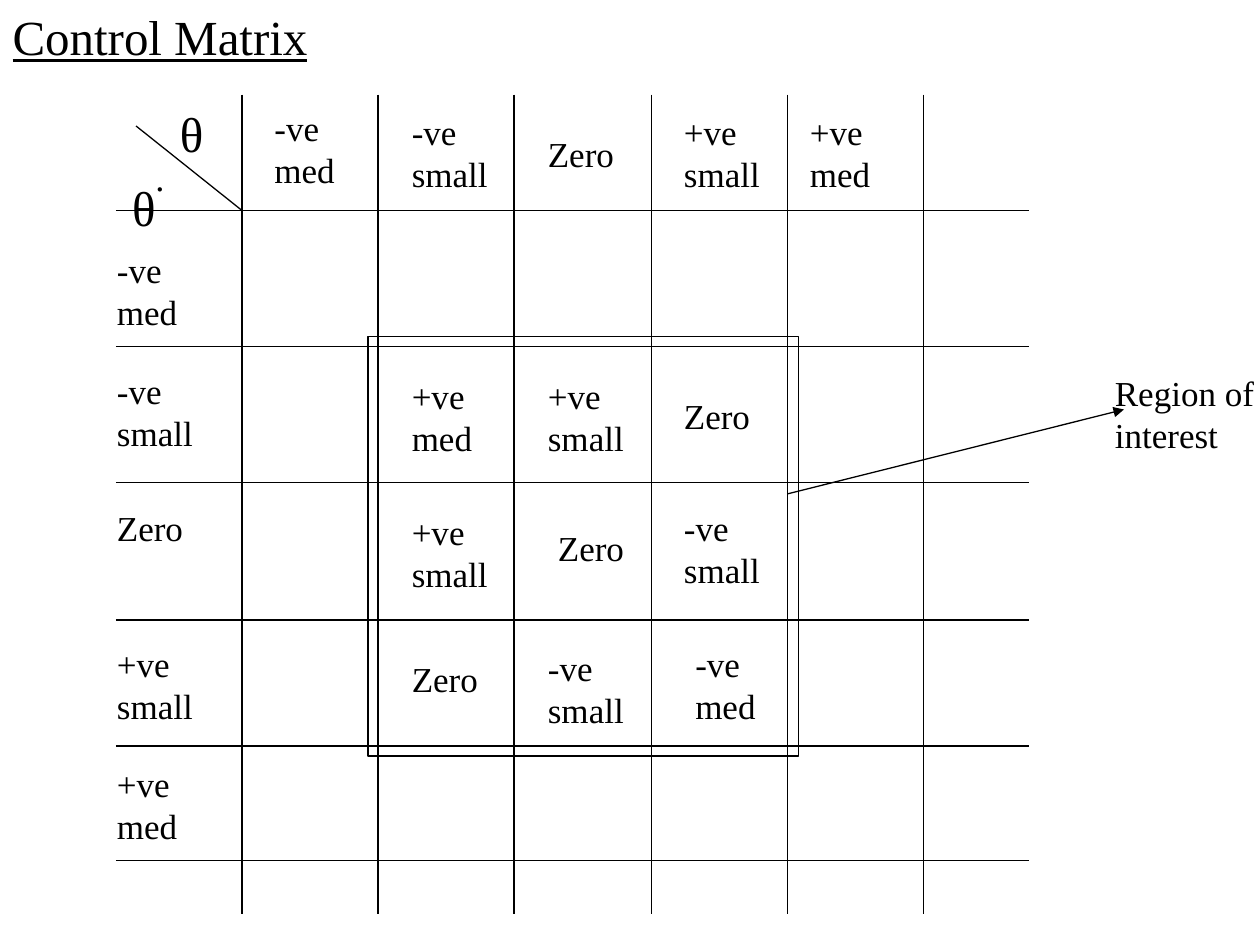
from lxml import etree
from pptx import Presentation
from pptx.dml.color import RGBColor
from pptx.enum.shapes import MSO_CONNECTOR, MSO_SHAPE
from pptx.enum.text import MSO_ANCHOR, MSO_AUTO_SIZE, PP_ALIGN
from pptx.oxml.ns import qn
from pptx.util import Inches, Pt

STRAIGHT = MSO_CONNECTOR.STRAIGHT
RECT = MSO_SHAPE.RECTANGLE
TOP = MSO_ANCHOR.TOP
GROW = MSO_AUTO_SIZE.SHAPE_TO_FIT_TEXT
LEFT = PP_ALIGN.LEFT

BLACK = RGBColor(0, 0, 0)
FONT = "Times New Roman"

# Grid lines: even columns, rows of varied height
COLS = [round((23 + 13 * i) / 12, 2) for i in range(6)]
ROWS = [1.67, 2.75, 3.83, 4.92, 5.92, 6.83]

# Labels and cells as (text, left, top)
SIDE = [("-ve med", 0.83, 1.92), ("-ve small", 0.83, 2.88),
        ("Zero", 0.83, 3.97), ("+ve small", 0.83, 5.05),
        ("+ve med", 0.83, 6)]
HEAD = [("-ve med", 2.08, 0.8), ("-ve small", 3.17, 0.83),
        ("Zero", 4.25, 1), ("+ve small", 5.33, 0.83),
        ("+ve med", 6.33, 0.83)]
CELLS = [("+ve med", 3.17, 2.92), ("+ve small", 4.25, 2.92),
         ("Zero", 5.33, 3.08),
         ("+ve small", 3.17, 4), ("Zero", 4.33, 4.13),
         ("-ve small", 5.33, 3.97),
         ("Zero", 3.17, 5.17), ("-ve small", 4.25, 5.08),
         ("-ve med", 5.42, 5.05)]


def add_run(para, text, size=20, line=False, base=None):
    run = para.add_run()
    run.text = text
    font = run.font
    font.name, font.size, font.underline = FONT, Pt(size), line
    font.color.rgb = BLACK
    if base:
        font._element.set("baseline", str(base * 1000))


def write(shape, text, wrap=True, **style):
    frame = shape.text_frame
    frame.word_wrap = wrap
    frame.auto_size = GROW
    frame.vertical_anchor = TOP
    para = frame.paragraphs[0]
    para.alignment = LEFT
    add_run(para, text, **style)
    return para


def add_text(slide, text, left, top, width=0.83, height=None, **style):
    if height is None:
        height = 0.77 if " " in text else 0.43
    box = slide.shapes.add_textbox(Inches(left), Inches(top),
                                   Inches(width), Inches(height))
    return write(box, text, **style)


def add_title(slide, text):
    title = slide.shapes.title
    title.left, title.top = Inches(0), Inches(0)
    title.width, title.height = Inches(3.92), Inches(0.57)
    write(title, text, size=28, line=True)


def add_line(slide, x1, y1, x2, y2, arrow=False):
    line = slide.shapes.add_connector(STRAIGHT, Inches(x1), Inches(y1),
                                      Inches(x2), Inches(y2))
    line.line.color.rgb = BLACK
    line.line.width = Pt(0.75)
    if arrow:
        ln = line.line._get_or_add_ln()
        etree.SubElement(ln, qn("a:tailEnd"), type="triangle")
    etree.SubElement(line._element.spPr, qn("a:effectLst"))


def add_frame(slide, left, top, width, height):
    frame = slide.shapes.add_shape(RECT, Inches(left), Inches(top),
                                   Inches(width), Inches(height))
    frame.shadow.inherit = False
    frame.fill.background()
    frame.line.color.rgb = BLACK
    frame.line.width = Pt(0.75)


def main():
    prs = Presentation()
    prs.slide_width, prs.slide_height = Inches(10), Inches(7.5)
    slide = prs.slides.add_slide(prs.slide_layouts[5])
    add_title(slide, "Control Matrix")

    # Grid
    for x in COLS:
        add_line(slide, x, 0.75, x, 7.25)
    for y in ROWS:
        add_line(slide, 0.92, y, 8.17, y)

    # Labels and cell values
    for text, left, top in SIDE + HEAD + CELLS:
        add_text(slide, text, left, top)

    # Region of interest
    add_frame(slide, 2.92, 2.67, 3.42, 3.33)
    add_line(slide, 6.25, 3.92, 8.92, 3.25, arrow=True)
    add_text(slide, "Region of interest", 8.75, 2.9, width=1.67)

    # Corner: angle across, its rate down
    add_line(slide, COLS[0], ROWS[0], 1.08, 1)
    rate = add_text(slide, "θ", 0.95, 1.18, 0.47, 0.57, size=28)
    add_run(rate, ".", size=36, base=56)
    add_text(slide, "θ", 1.33, 0.77, 0.39, 0.57, size=28, wrap=False)

    prs.save("out.pptx")


if __name__ == "__main__":
    main()
